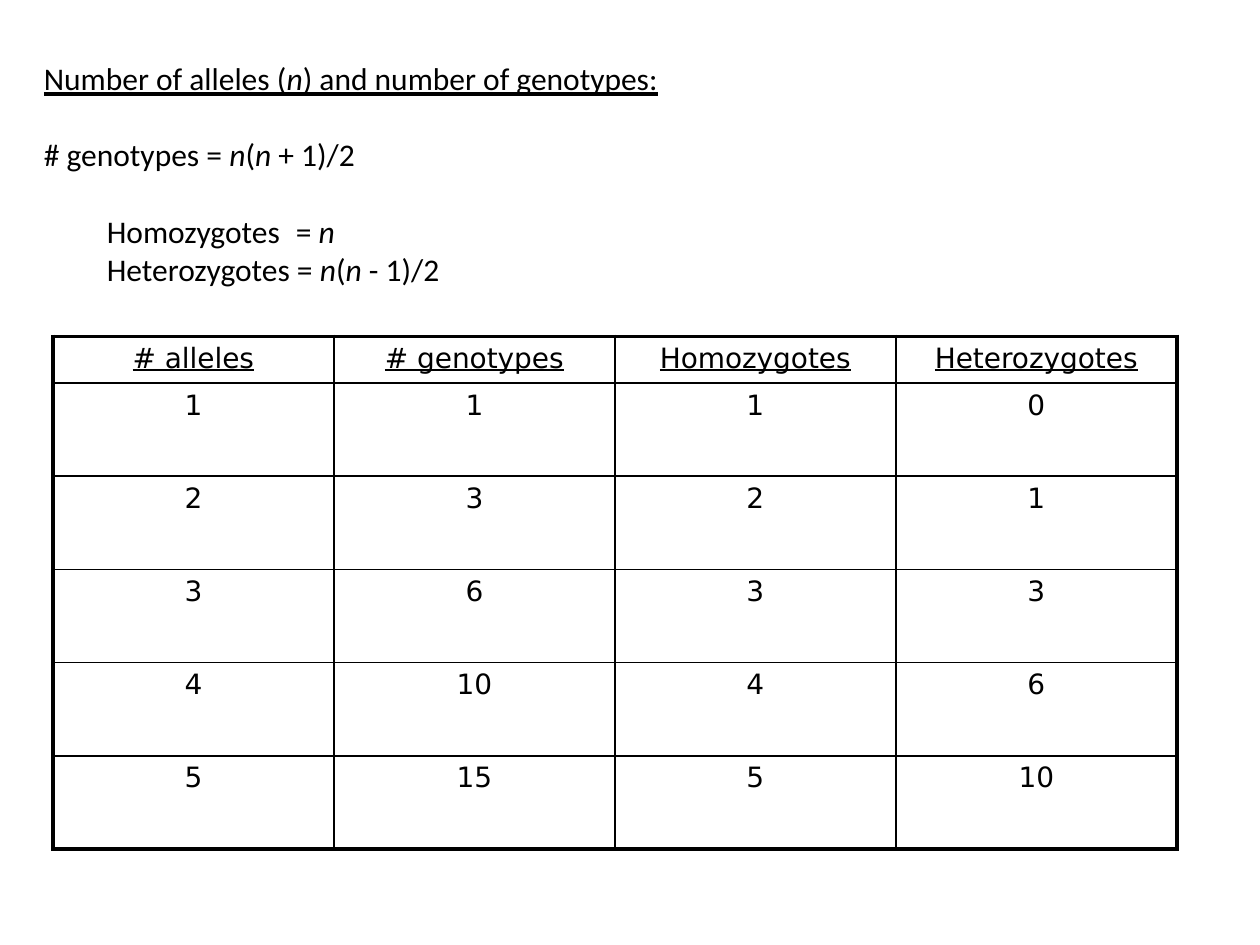
"""Build a slide on how the number of alleles sets the number of genotypes."""
from lxml.etree import SubElement
from pptx import Presentation
from pptx.dml.color import RGBColor
from pptx.enum.text import PP_ALIGN
from pptx.oxml.ns import qn
from pptx.util import Inches, Pt

COLORS = {"text": "000000", "border": "000000"}
OUTER_WIDTH, INNER_WIDTH = Pt(2.25), Pt(1)


def write_text(paragraph, text, font="Calibri", size=18, underline=False, align=PP_ALIGN.LEFT):
    """Fill a paragraph, setting the parts between asterisks in italics."""
    paragraph.alignment = align
    for index, part in enumerate(text.split("*")):
        if part:
            run = paragraph.add_run()
            run.text = part
            run.font.name = font
            run.font.size = Pt(size)
            run.font.underline = underline
            run.font.italic = index % 2 == 1
            run.font.color.rgb = RGBColor.from_string(COLORS["text"])


def add_border(cell, side, width):
    """Draw one side of a table cell."""
    line = SubElement(cell._tc.get_or_add_tcPr(), qn(f"a:ln{side}"), w=str(width))
    fill = SubElement(line, qn("a:solidFill"))
    SubElement(fill, qn("a:srgbClr"), val=COLORS["border"])


presentation = Presentation()
presentation.slide_width = Inches(10)
presentation.slide_height = Inches(7.5)
slide = presentation.slides.add_slide(presentation.slide_layouts[6])

formula_box = slide.shapes.add_textbox(Inches(0.25), Inches(0.42), Inches(9.33), Inches(2.22))
text_frame = formula_box.text_frame
text_frame.word_wrap = True
formulas = [
    ("Number of alleles (*n*) and number of genotypes:", 0, 0, True),
    ("# genotypes = *n*(*n* + 1)/2", 0, 22, False),
    ("Homozygotes \t= *n*", 1, 22, False),
    ("Heterozygotes = *n*(*n* - 1)/2", 1, 0, False),
]
for index, (text, level, space_before, underline) in enumerate(formulas):
    paragraph = text_frame.add_paragraph() if index else text_frame.paragraphs[0]
    paragraph.level = level
    paragraph.space_before = Pt(space_before)
    properties = paragraph._p.get_or_add_pPr()
    properties.set("marL", str(Inches(0.5 + 0.5 * level)))
    properties.set("indent", str(Inches(-0.5)))
    write_text(paragraph, text, underline=underline)

rows = [["# alleles", "# genotypes", "Homozygotes", "Heterozygotes"]]
for n in range(1, 6):
    rows.append([n, n * (n + 1) // 2, n, n * (n - 1) // 2])
last_row, last_column = len(rows) - 1, len(rows[0]) - 1

table = slide.shapes.add_table(
    len(rows), len(rows[0]), Inches(0.42), Inches(2.67), Inches(8.92), Inches(4.07)
).table
table.first_row = False
table.horz_banding = False
for column in table.columns:
    column.width = Inches(2.23)
for row_index, values in enumerate(rows):
    table.rows[row_index].height = Inches(0.74 if row_index else 0.37)
    for column_index, value in enumerate(values):
        cell = table.cell(row_index, column_index)
        write_text(cell.text_frame.paragraphs[0], str(value), font="DejaVu Sans", size=16,
                   underline=row_index == 0, align=PP_ALIGN.CENTER)
        outer_sides = {
            "L": column_index == 0,
            "R": column_index == last_column,
            "T": row_index == 0,
            "B": row_index == last_row,
        }
        for side, is_outer in outer_sides.items():
            add_border(cell, side, OUTER_WIDTH if is_outer else INNER_WIDTH)
        cell.fill.background()

presentation.save("out.pptx")
